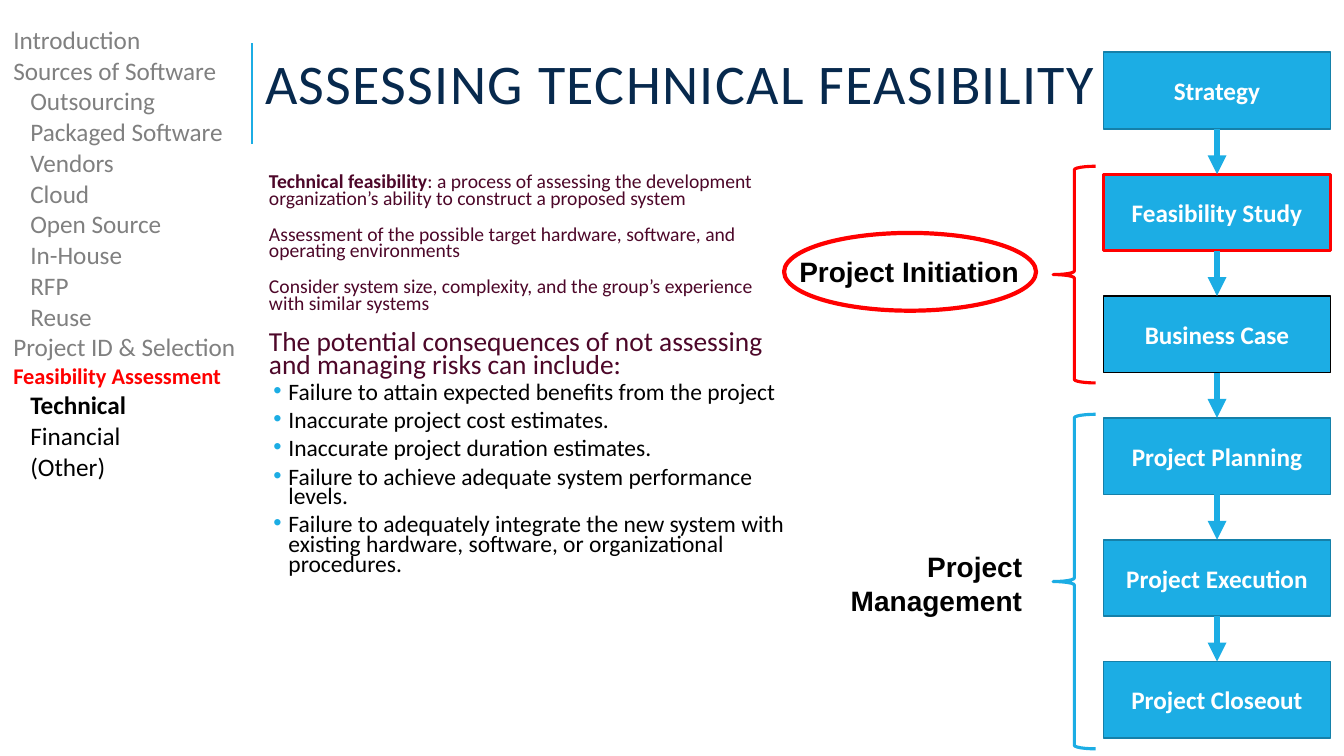
"""Build the technical feasibility slide with its topic list and project flow."""
from lxml.etree import SubElement
from pptx import Presentation
from pptx.dml.color import RGBColor
from pptx.enum.shapes import MSO_CONNECTOR as CONN, MSO_SHAPE as SHAPE
from pptx.enum.text import MSO_ANCHOR as ANCHOR, PP_ALIGN as ALIGN
from pptx.oxml.ns import qn
from pptx.util import Cm, Pt

C = {"blue": "1CADE4", "edge": "1580A9", "red": "FF0000", "navy": "07294D",
     "wine": "4D0729", "grey": "808080", "black": "000000", "white": "FFFFFF"}

TOPICS = [
    ("Introduction", 0), ("Sources of Software", 0), ("Outsourcing", 1),
    ("Packaged Software", 1), ("Vendors", 1), ("Cloud", 1), ("Open Source", 1),
    ("In-House", 1), ("RFP", 1), ("Reuse", 1), ("Project ID & Selection", 0),
    ("Feasibility Assessment", 0), ("Technical", 1), ("Financial", 1), ("(Other)", 1),
]
TOPIC_STYLES = {
    "Feasibility Assessment": (16, "red", True), "Technical": (18, "black", True),
    "Financial": (18, "black", False), "(Other)": (18, "black", False),
}
TERM = "Technical feasibility"
POINTS = [
    ": a process of assessing the development organization’s ability to construct a proposed system",
    "Assessment of the possible target hardware, software, and operating environments",
    "Consider system size, complexity, and the group’s experience with similar systems",
]
RISK_LEAD = "The potential consequences of not assessing and managing risks can include:"
RISKS = [
    "Failure to attain expected benefits from the project",
    "Inaccurate project cost estimates.",
    "Inaccurate project duration estimates.",
    "Failure to achieve adequate system performance levels.",
    "Failure to adequately integrate the new system with existing hardware, software, "
    "or organizational procedures.",
]
STAGES = [
    ("Strategy", "edge", 1.25), ("Feasibility Study", "red", 2.25),
    ("Business Case", "black", 1), ("Project Planning", "edge", 1.25),
    ("Project Execution", "edge", 1.25), ("Project Closeout", "edge", 1.25),
]


def rgb(name):
    return RGBColor.from_string(C[name])


def style(p, size, color, bold=False, font="Calibri"):
    for r in p.runs:
        r.font.name, r.font.size, r.font.bold = font, Pt(size), bold
        r.font.color.rgb = rgb(color)


def space(p, line, before=0, after=0):
    p.line_spacing, p.space_before, p.space_after = line, Pt(before), Pt(after)


def indent(p, left, first=0):
    pPr = p._p.get_or_add_pPr()
    pPr.set("marL", str(Cm(left)))
    pPr.set("indent", str(Cm(first)))
    return pPr


def add_bullet(p):
    pPr = indent(p, 0.74, -0.38)
    SubElement(SubElement(pPr, qn("a:buClr")), qn("a:srgbClr"), val=C["blue"])
    SubElement(pPr, qn("a:buFont"), typeface="Arial")
    SubElement(pPr, qn("a:buChar"), char="•")


def add_text(s, x, y, w, h):
    tf = s.shapes.add_textbox(Cm(x), Cm(y), Cm(w), Cm(h)).text_frame
    tf.word_wrap = True
    return tf


def add_outline(s, kind, x, y, w, h, line, width, fill=None):
    sp = s.shapes.add_shape(kind, Cm(x), Cm(y), Cm(w), Cm(h))
    sp.shadow.inherit = False
    if fill:
        sp.fill.solid()
        sp.fill.fore_color.rgb = rgb(fill)
    else:
        sp.fill.background()
    sp.line.color.rgb, sp.line.width = rgb(line), Pt(width)
    return sp


def add_line(s, x1, y1, x2, y2, width):
    cx = s.shapes.add_connector(CONN.STRAIGHT, Cm(x1), Cm(y1), Cm(x2), Cm(y2))
    cx.line.color.rgb, cx.line.width = rgb("blue"), Pt(width)
    SubElement(cx._element.spPr, qn("a:effectLst"))
    return cx


def add_arrow(s, upper, lower):
    cx = add_line(s, 0, 0, 1, 1, 4.5)
    cx.begin_connect(upper, 2)
    cx.end_connect(lower, 0)
    SubElement(cx.line._get_or_add_ln(), qn("a:tailEnd"), type="triangle")


def add_title(s):
    tf = add_text(s, 6.43, 0.13, 27, 4.17)
    tf.vertical_anchor = ANCHOR.MIDDLE
    tf.text = "ASSESSING TECHNICAL FEASIBILITY"
    p = tf.paragraphs[0]
    space(p, 0.8)
    style(p, 40, "navy")
    p.runs[0].font._element.set("spc", "100")


def add_topics(s):
    table = s.shapes.add_table(2, 1, Cm(0.08), Cm(0.51), Cm(6.35), Cm(13.69)).table
    table.first_row = table.horz_banding = False
    for row, height in zip(table.rows, (12.34, 1.35)):
        row.height = Cm(height)
        row.cells[0].fill.background()
    tf = table.cell(0, 0).text_frame
    tf.text = "\n".join(name for name, _ in TOPICS)
    for p, (name, level) in zip(tf.paragraphs, TOPICS):
        indent(p, 0.43 * level)
        style(p, *TOPIC_STYLES.get(name, (18, "grey", False)))


def add_body(s):
    tf = add_text(s, 6.4, 4.29, 13.67, 11.25)
    tf.margin_left = tf.margin_right = tf.margin_top = tf.margin_bottom = Cm(0.13)
    tf.text = "\n".join([TERM] + POINTS[1:] + [RISK_LEAD] + RISKS)
    tf.paragraphs[0].add_run().text = POINTS[0]
    lead = len(POINTS)
    for i, p in enumerate(tf.paragraphs):
        if i > lead:
            space(p, 0.7, 2, 4)
            add_bullet(p)
            style(p, 16.8, "black")
        else:
            space(p, 0.7, 12, 2)
            indent(p, 0.25)
            style(p, 19.6 if i == lead else 14, "wine")
    tf.paragraphs[0].runs[0].font.bold = True


def add_stage(s, i, name, line, width):
    sp = add_outline(s, SHAPE.RECTANGLE, 27.81, 1.32 + 3.07 * i, 5.72, 1.93,
                     line, width, "blue")
    tf = sp.text_frame
    tf.text, tf.vertical_anchor = name, ANCHOR.MIDDLE
    p = tf.paragraphs[0]
    p.alignment = ALIGN.CENTER
    style(p, 18, "white", True)
    return sp


def add_phase(s, name, box, brace_top, brace_height, color):
    add_outline(s, SHAPE.LEFT_BRACE, 26.54, brace_top, 1.07, brace_height, color, 2.25)
    tf = add_text(s, *box)
    tf.text = name
    p = tf.paragraphs[0]
    p.alignment = ALIGN.RIGHT
    style(p, 20, "black", True, "Arial")


def main():
    prs = Presentation()
    prs.slide_width, prs.slide_height = Cm(33.87), Cm(19.05)
    s = prs.slides.add_slide(prs.slide_layouts[6])
    add_line(s, 6.35, 3.63, 6.35, 1.09, 1.5)
    add_title(s)
    add_topics(s)
    add_body(s)
    stages = [add_stage(s, i, *stage) for i, stage in enumerate(STAGES)]
    for upper, lower in zip(stages, stages[1:]):
        add_arrow(s, upper, lower)
    add_phase(s, "Project Initiation", (19.48, 6.3, 6.45, 1.12), 4.19, 5.46, "red")
    add_phase(s, "Project Management", (20.55, 13.72, 5.46, 1.96), 10.44, 8.43, "blue")
    add_outline(s, SHAPE.OVAL, 19.76, 5.87, 6.35, 1.96, "red", 3)
    prs.save("out.pptx")


if __name__ == "__main__":
    main()
